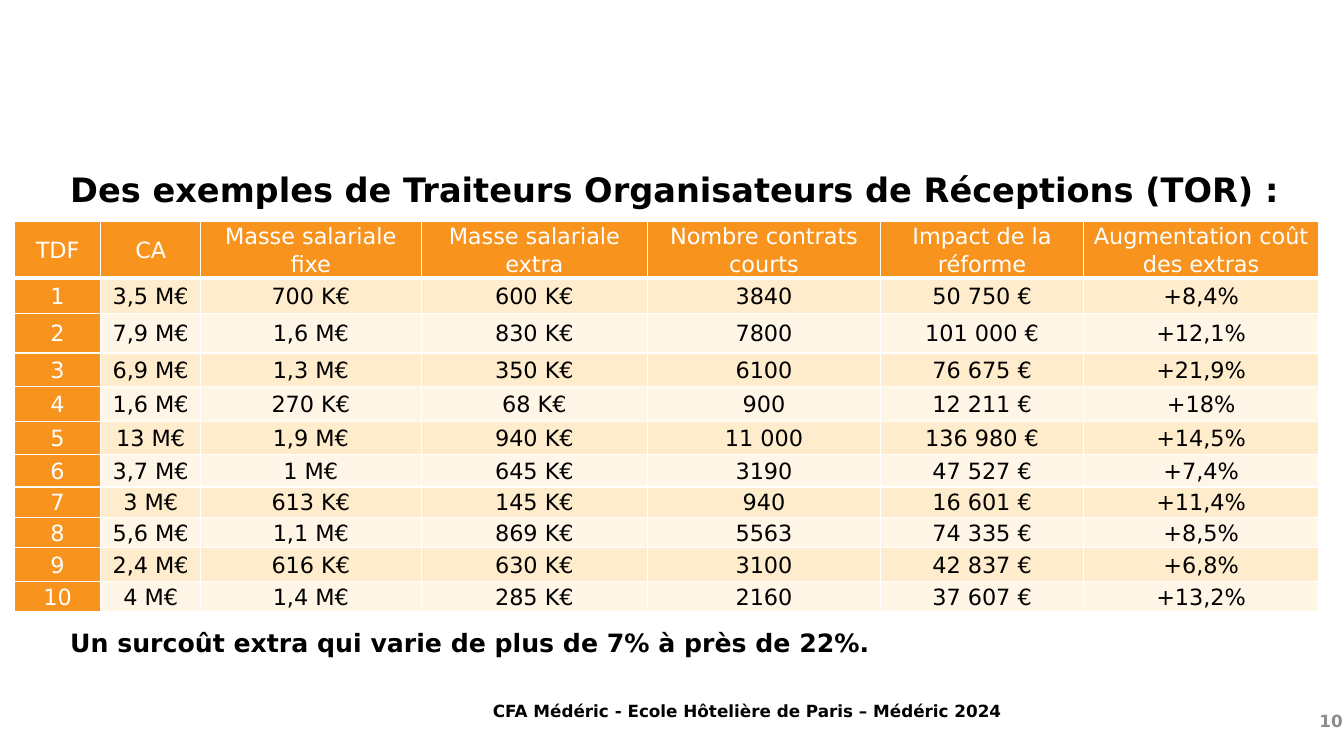
from dataclasses import dataclass

from lxml.etree import SubElement
from pptx import Presentation
from pptx.dml.color import RGBColor
from pptx.enum.text import MSO_ANCHOR, MSO_AUTO_SIZE, PP_ALIGN
from pptx.oxml.ns import qn
from pptx.util import Cm, Pt


@dataclass(frozen=True)
class Theme:
    font: str = "DejaVu Sans"
    orange: str = "F8931D"
    bands: tuple = ("FFECCC", "FFF6E7")
    white: str = "FFFFFF"
    black: str = "000000"
    grey: str = "8C8C8C"
    title: int = 24
    conclusion: int = 18
    table: int = 16
    footer: int = 12


@dataclass(frozen=True)
class Box:
    left: float
    top: float
    width: float
    height: float

    def lengths(self):
        return Cm(self.left), Cm(self.top), Cm(self.width), Cm(self.height)


THEME = Theme()
HEADERS = ["TDF", "CA", "Masse salariale fixe", "Masse salariale extra",
           "Nombre contrats courts", "Impact de la réforme",
           "Augmentation coût des extras"]
CATERERS = [
    ["1", "3,5 M€", "700 K€", "600 K€", "3840", "50 750 €", "+8,4%"],
    ["2", "7,9 M€", "1,6 M€", "830 K€", "7800", "101 000 €", "+12,1%"],
    ["3", "6,9 M€", "1,3 M€", "350 K€", "6100", "76 675 €", "+21,9%"],
    ["4", "1,6 M€", "270 K€", "68 K€", "900", "12 211 €", "+18%"],
    ["5", "13 M€", "1,9 M€", "940 K€", "11 000", "136 980 €", "+14,5%"],
    ["6", "3,7 M€", "1 M€", "645 K€", "3190", "47 527 €", "+7,4%"],
    ["7", "3 M€", "613 K€", "145 K€", "940", "16 601 €", "+11,4%"],
    ["8", "5,6 M€", "1,1 M€", "869 K€", "5563", "74 335 €", "+8,5%"],
    ["9", "2,4 M€", "616 K€", "630 K€", "3100", "42 837 €", "+6,8%"],
    ["10", "4 M€", "1,4 M€", "285 K€", "2160", "37 607 €", "+13,2%"],
]
COLUMN_SHARES = [0.86, 0.99, 2.19, 2.25, 2.31, 2.02, 2.33]
ROW_SHARES = [0.56, 0.35, 0.39, 0.33, 0.35, 0.33, 0.32, 0.3, 0.3, 0.34, 0.3]


def style_paragraph(p, size, color, bold, align=PP_ALIGN.LEFT):
    p.alignment = align
    for r in p.runs:
        r.font.name = THEME.font
        r.font.size = Pt(size)
        r.font.bold = bold
        r.font.color.rgb = RGBColor.from_string(color)


def space_paragraph(p):
    p.line_spacing = 1.07
    p.space_after = Pt(8)


def add_text(s, box, text, size, color=THEME.black, align=PP_ALIGN.LEFT):
    tf = s.shapes.add_textbox(*box.lengths()).text_frame
    tf.word_wrap = True
    tf.text = text
    style_paragraph(tf.paragraphs[0], size, color, True, align)
    return tf


def add_title(s, box):
    tf = add_text(s, box, "Des exemples de Traiteurs Organisateurs de Réceptions (TOR) :",
                  THEME.title)
    tf.auto_size = MSO_AUTO_SIZE.SHAPE_TO_FIT_TEXT


def add_conclusion(s, box):
    tf = add_text(s, box, "Un surcoût extra qui varie de plus de 7% à près de 22%.",
                  THEME.conclusion)
    tf.auto_size = MSO_AUTO_SIZE.SHAPE_TO_FIT_TEXT
    space_paragraph(tf.paragraphs[0])


def add_footer(s, box):
    tf = add_text(s, box, "CFA Médéric - Ecole Hôtelière de Paris – Médéric 2024",
                  THEME.footer, align=PP_ALIGN.CENTER)
    tf.margin_top = 0


def add_page_number(s, box):
    tf = add_text(s, box, "10", THEME.footer, THEME.grey, PP_ALIGN.RIGHT)
    tf.vertical_anchor = MSO_ANCHOR.MIDDLE


def set_borders(cell, bottom):
    tc_pr = cell._tc.get_or_add_tcPr()
    for side, width in (("L", 1), ("R", 1), ("T", 1), ("B", bottom)):
        line = SubElement(tc_pr, qn(f"a:ln{side}"), w=str(Pt(width)))
        fill = SubElement(line, qn("a:solidFill"))
        SubElement(fill, qn("a:srgbClr"), val=THEME.white)


def style_cell(cell, row, column):
    is_heading = row == 0 or column == 0
    set_borders(cell, 3 if row == 0 else 1)
    cell.fill.solid()
    fill = THEME.orange if is_heading else THEME.bands[(row - 1) % 2]
    cell.fill.fore_color.rgb = RGBColor.from_string(fill)
    cell.vertical_anchor = MSO_ANCHOR.MIDDLE
    cell.margin_left = cell.margin_right = Cm(0.18)
    cell.margin_top = cell.margin_bottom = 0
    p = cell.text_frame.paragraphs[0]
    space_paragraph(p)
    style_paragraph(p, THEME.table, THEME.white if is_heading else THEME.black,
                    False, PP_ALIGN.CENTER)


def add_caterers_table(s, box):
    rows = [HEADERS] + CATERERS
    table = s.shapes.add_table(len(rows), len(HEADERS), *box.lengths()).table
    for column, share in zip(table.columns, COLUMN_SHARES):
        column.width = Cm(box.width * share / sum(COLUMN_SHARES))
    for row, share in zip(table.rows, ROW_SHARES):
        row.height = Cm(box.height * share / sum(ROW_SHARES))
    for i, values in enumerate(rows):
        for j, value in enumerate(values):
            cell = table.cell(i, j)
            cell.text = value
            style_cell(cell, i, j)


def main():
    prs = Presentation()
    prs.slide_width = Cm(33.87)
    prs.slide_height = Cm(19.05)
    s = prs.slides.add_slide(prs.slide_layouts[6])
    add_caterers_table(s, Box(0.36, 5.59, 32.87, 9.84))
    add_title(s, Box(1.52, 4.14, 32, 1.27))
    add_conclusion(s, Box(1.52, 15.62, 22.76, 1.02))
    add_footer(s, Box(11.23, 17.65, 15.21, 1.02))
    add_page_number(s, Box(23.93, 17.65, 10.16, 1.02))
    prs.save("out.pptx")


if __name__ == "__main__":
    main()
